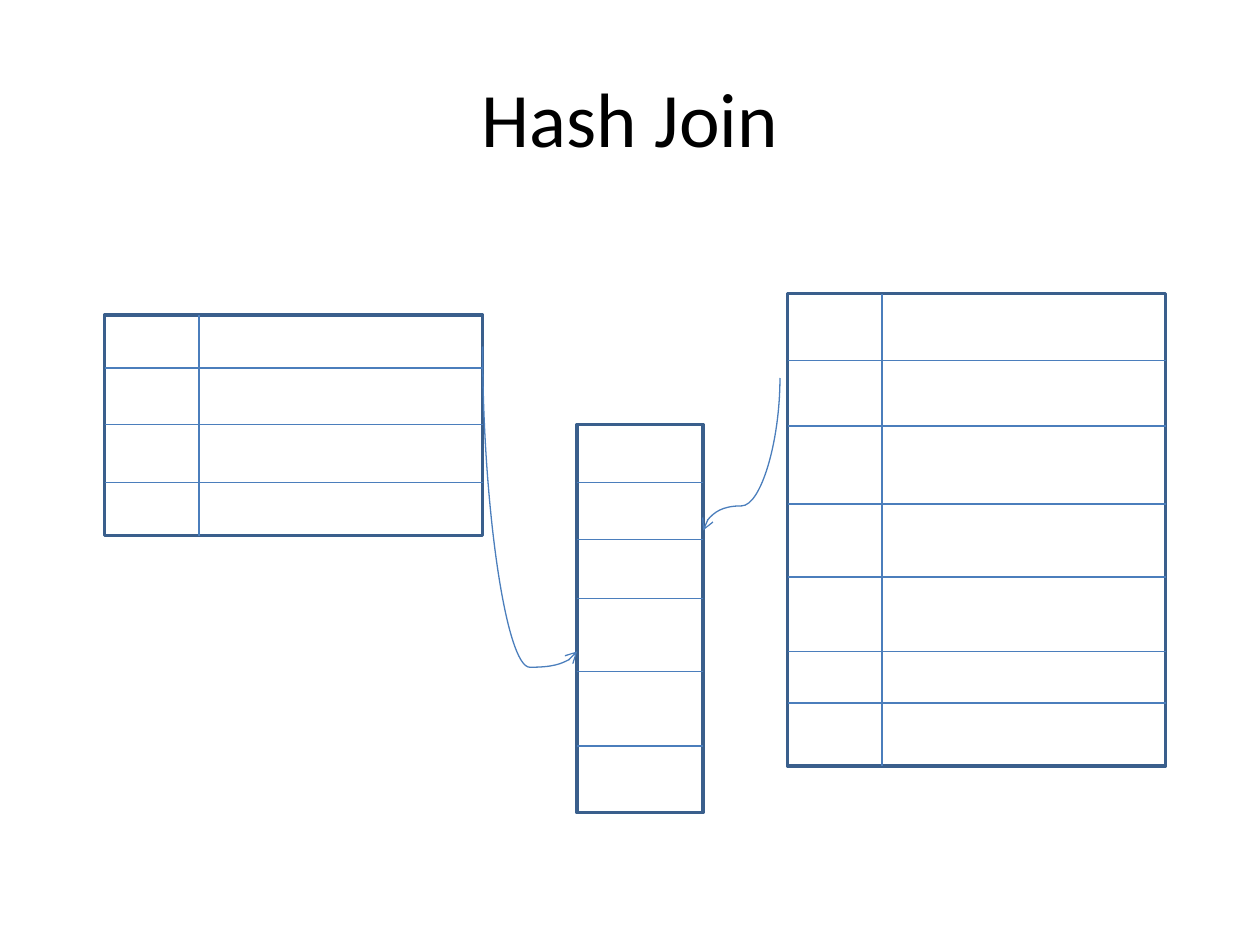
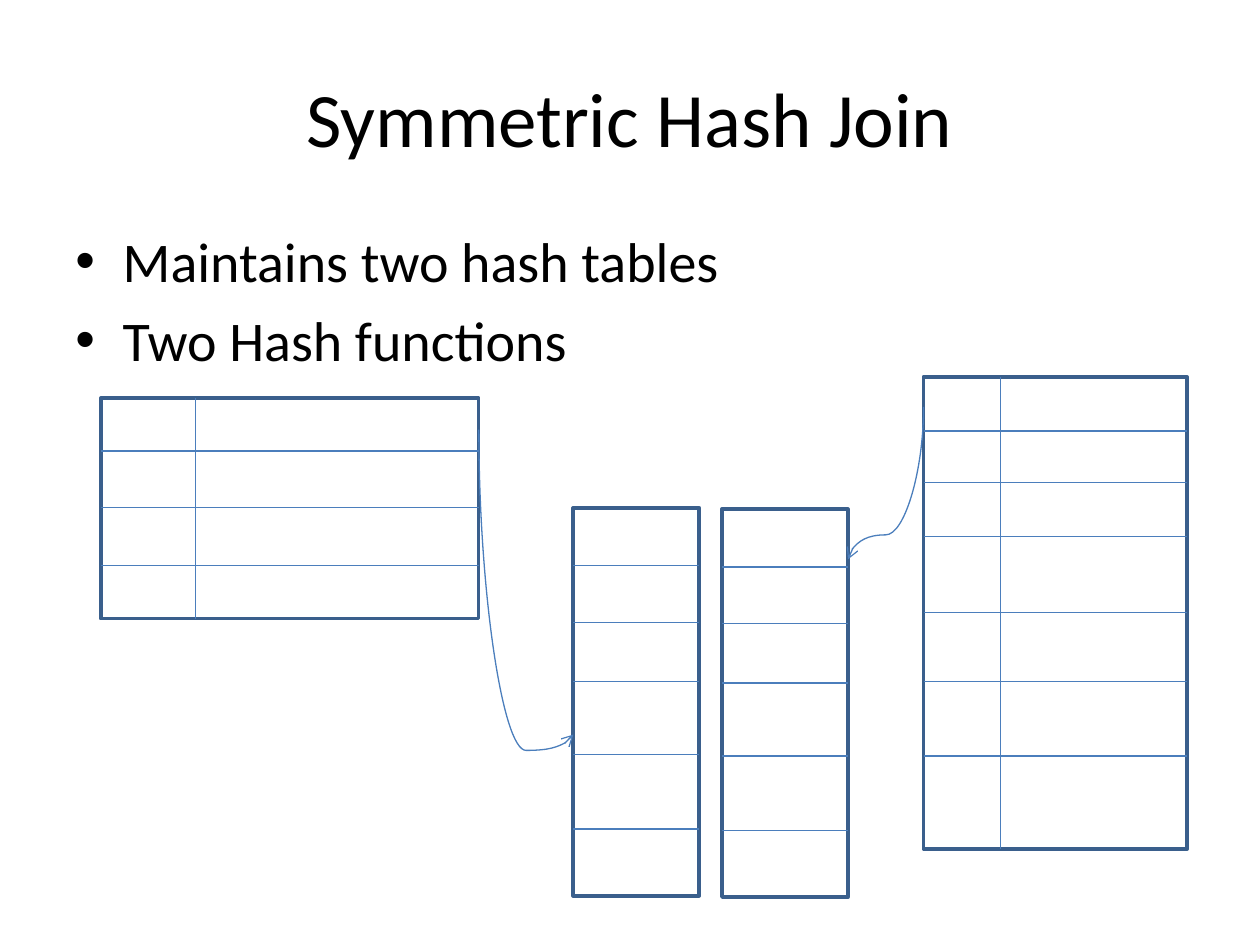
from lxml.etree import SubElement
from pptx import Presentation
from pptx.dml.color import RGBColor
from pptx.enum.shapes import MSO_CONNECTOR, MSO_SHAPE
from pptx.enum.text import MSO_ANCHOR, PP_ALIGN
from pptx.oxml.ns import qn
from pptx.util import Emu, Pt

SCALE = 9144  # EMU in one px, 100 px to the inch
COLORS = {"text": "000000", "frame": "3A5F8C", "rule": "4B7EBC"}
FONT = "Calibri"
TITLE_ONLY = 5
TITLE_BOX = (50, 30, 900, 125)

# Row lines, measured down from the top of each table
LEFT_ROWS = (42, 87, 133)
HASH_ROWS = (46, 91, 138, 196, 255)
HASH_SIZE = (100, 308)


def px(length):
    return Emu(round(length * SCALE))


def color(name):
    return RGBColor.from_string(COLORS[name])


def write(frame, lines, size, align=PP_ALIGN.LEFT, anchor=MSO_ANCHOR.TOP, bullet=None):
    frame.word_wrap = True
    frame.vertical_anchor = anchor
    for index, text in enumerate(lines):
        para = frame.paragraphs[0] if index == 0 else frame.add_paragraph()
        para.alignment = align
        span = para.add_run()
        span.text = text
        span.font.name = FONT
        span.font.size = Pt(size)
        span.font.color.rgb = color("text")
        if bullet:
            add_bullet(para, bullet)


def add_bullet(para, mark, indent=37.5):
    props = para._p.get_or_add_pPr()
    props.set("marL", str(px(indent)))
    props.set("indent", str(px(-indent)))
    before = SubElement(props, qn("a:spcBef"))
    SubElement(before, qn("a:spcPct")).set("val", "20000")
    SubElement(props, qn("a:buFont")).set("typeface", "Arial")
    SubElement(props, qn("a:buChar")).set("char", mark)


def add_line(page, start, end, kind=MSO_CONNECTOR.STRAIGHT):
    line = page.shapes.add_connector(kind, *map(px, (*start, *end)))
    line.line.color.rgb = color("rule")
    line.line.width = Pt(0.75)
    SubElement(line._element.spPr, qn("a:effectLst"))
    return line


def add_curve(page, start, end, bend):
    """Curved arrow that leaves downwards: its level box is turned a quarter."""
    (x1, y1), (x2, y2) = start, end
    middle_x, middle_y = (x1 + x2) / 2, (y1 + y2) / 2
    half_width, half_height = (y2 - y1) / 2, abs(x2 - x1) / 2
    curve = add_line(page, (middle_x - half_width, middle_y - half_height),
                     (middle_x + half_width, middle_y + half_height), MSO_CONNECTOR.CURVE)
    props = curve._element.spPr
    to_right = x2 > x1
    props.xfrm.set("rot", str((270 if to_right else 90) * 60000))
    if to_right:
        props.xfrm.set("flipH", "1")
    guides = props.find(qn("a:prstGeom")).get_or_add_avLst()
    guide = SubElement(guides, qn("a:gd"))
    guide.set("name", "adj1")
    guide.set("fmla", f"val {round(bend * 100000)}")
    SubElement(props.find(qn("a:ln")), qn("a:tailEnd")).set("type", "arrow")


def add_grid(page, box, rows, key_width=None):
    """Framed table outline with row lines and, if given, a key column."""
    left, top, width, height = box
    frame = page.shapes.add_shape(MSO_SHAPE.RECTANGLE, *map(px, box))
    frame.shadow.inherit = False
    frame.fill.background()
    frame.line.color.rgb = color("frame")
    frame.line.width = Pt(2)
    if key_width:
        add_line(page, (left + key_width, top), (left + key_width, top + height))
    for row in rows:
        add_line(page, (left, top + row), (left + width, top + row))


def add_probe(page, left, top):
    """Left relation, its hash table and the arrow between them."""
    add_grid(page, (left, top, 300, 175), LEFT_ROWS, key_width=75)
    add_grid(page, (left + 375, top + 87, *HASH_SIZE), HASH_ROWS)
    add_curve(page, (left + 300, top + 25), (left + 375, top + 267), bend=1.052)


def add_page(deck, title):
    page = deck.slides.add_slide(deck.slide_layouts[TITLE_ONLY])
    holder = page.shapes.title
    holder.left, holder.top, holder.width, holder.height = map(px, TITLE_BOX)
    write(holder.text_frame, [title], size=44, align=PP_ALIGN.CENTER, anchor=MSO_ANCHOR.MIDDLE)
    return page


def build_hash_join(deck):
    page = add_page(deck, "Hash Join")
    add_probe(page, 83, 250)
    # Right relation, feeding the same hash table
    add_grid(page, (625, 233, 300, 375), (53, 105, 167, 225, 284, 325), key_width=75)
    add_curve(page, (619, 300), (558, 421), bend=0.839)


def build_symmetric_join(deck):
    page = add_page(deck, "Symmetric Hash Join")
    # Key points
    body = page.shapes.add_textbox(*map(px, (50, 175, 900, 495)))
    write(body.text_frame, ["Maintains two hash tables", "Two Hash functions"],
          size=32, bullet="•")
    add_probe(page, 80, 316)
    # Right relation with a hash table of its own
    add_grid(page, (733, 299, 209, 375), (43, 84, 127, 187, 242, 301), key_width=61)
    add_grid(page, (573, 404, *HASH_SIZE), HASH_ROWS)
    add_curve(page, (733, 323), (673, 444), bend=0.839)


def main():
    deck = Presentation()
    deck.slide_width, deck.slide_height = px(1000), px(750)
    build_hash_join(deck)
    build_symmetric_join(deck)
    deck.save("out.pptx")


if __name__ == "__main__":
    main()
